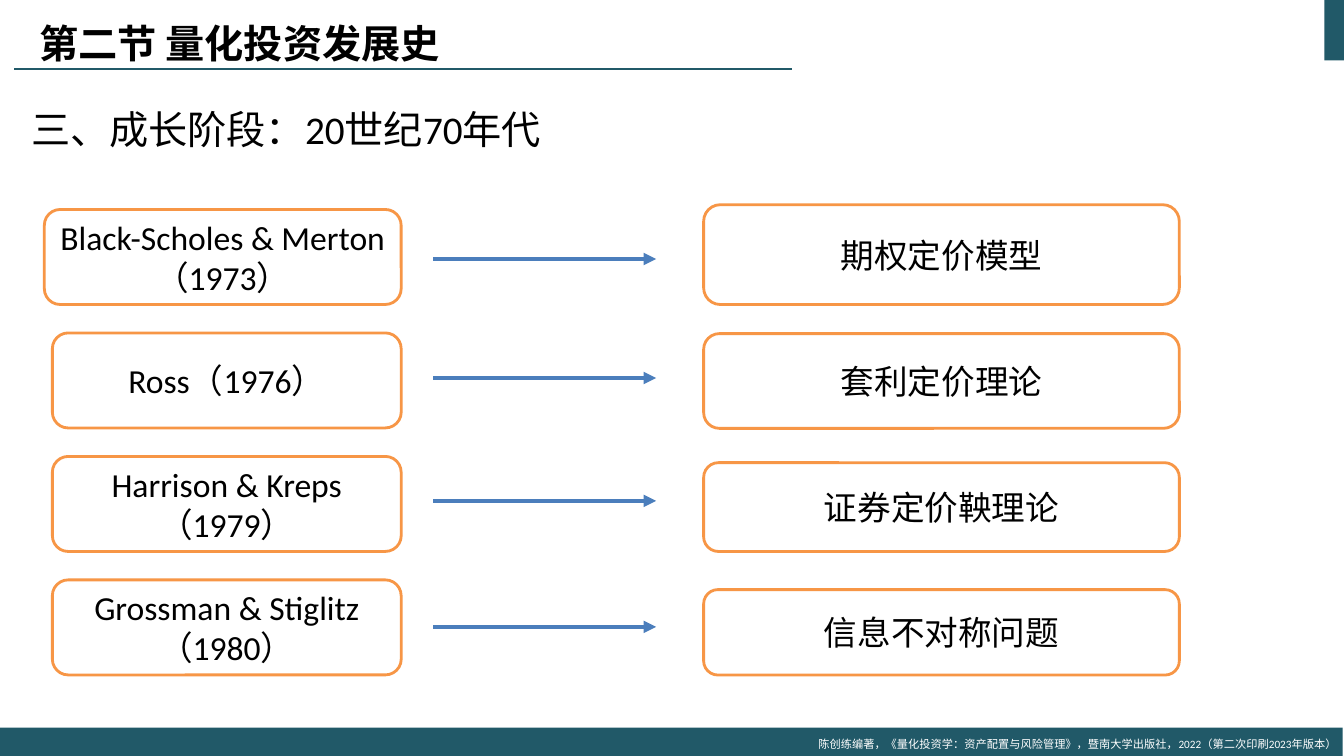
from lxml.etree import SubElement
from pptx import Presentation
from pptx.dml.color import RGBColor
from pptx.enum.shapes import MSO_CONNECTOR, MSO_SHAPE
from pptx.enum.text import MSO_ANCHOR, PP_ALIGN
from pptx.oxml.ns import qn
from pptx.util import Pt

COLORS = {
    "teal": "215968",
    "orange": "F79646",
    "blue": "4B7EBC",
    "white": "FFFFFF",
    "black": "000000",
}
LATIN_FONT = "Calibri"
CHINESE_FONT = "Noto Sans CJK SC"

ROW_TOP = 149.6
ROW_PITCH = 88.2
ROW_HEIGHT = 67.9
STAGES = [
    ("Black-Scholes & Merton\n（1973）", 31.7, 185, "期权定价模型", 146.2, 71.3),
    ("Ross（1976）", 37.4, 270, "套利定价理论", 238.3, 67.7),
    ("Harrison & Kreps\n（1979）", 37.4, 357.8, "证券定价鞅理论", 330.5, 63.4),
    ("Grossman & Stiglitz\n（1980）", 37.4, 447.8, "信息不对称问题", 421.2, 61),
]
AUTHOR_RIGHT = 286.6
ARROW_LEFT, ARROW_RIGHT = 309.6, 468.7
THEORY_LEFT, THEORY_WIDTH = 502.6, 339.8


def color(name):
    """Return the named colour."""
    return RGBColor.from_string(COLORS[name])


def write(frame, text, size, align, ink="black", latin=LATIN_FONT, bold=False):
    """Fill a text frame and format all its runs."""
    frame.word_wrap = True
    frame.text = text
    for para in frame.paragraphs:
        para.alignment = align
        for span in para.runs:
            span.font.size = Pt(size)
            span.font.bold = bold
            span.font.name = latin
            span.font.color.rgb = color(ink)
            east_asian = SubElement(span.font._element, qn("a:ea"))
            east_asian.set("typeface", CHINESE_FONT)


def add_bar(page, left, top, width, height):
    """Add a plain teal bar."""
    bar = page.shapes.add_shape(
        MSO_SHAPE.RECTANGLE, Pt(left), Pt(top), Pt(width), Pt(height))
    bar.shadow.inherit = False
    bar.fill.solid()
    bar.fill.fore_color.rgb = color("teal")
    bar.line.fill.background()


def add_line(page, left, right, y, ink, width, arrow=False):
    """Add a horizontal line, with an arrowhead at its right end if asked."""
    line = page.shapes.add_connector(
        MSO_CONNECTOR.STRAIGHT, Pt(left), Pt(y), Pt(right), Pt(y))
    line.line.color.rgb = color(ink)
    line.line.width = Pt(width)
    if arrow:
        SubElement(line.line._get_or_add_ln(), qn("a:tailEnd")).set("type", "triangle")
    SubElement(line._element.spPr, qn("a:effectLst"))


def add_text(page, left, top, width, height, text, size, align, ink="black"):
    """Add a text box and return its text frame."""
    box = page.shapes.add_textbox(Pt(left), Pt(top), Pt(width), Pt(height))
    write(box.text_frame, text, size, align, ink)
    return box.text_frame


def add_card(page, left, top, width, height, text):
    """Add a rounded, orange-edged box with centred text."""
    card = page.shapes.add_shape(
        MSO_SHAPE.ROUNDED_RECTANGLE, Pt(left), Pt(top), Pt(width), Pt(height))
    card.shadow.inherit = False
    card.fill.solid()
    card.fill.fore_color.rgb = color("white")
    card.line.color.rgb = color("orange")
    card.line.width = Pt(2)
    card.text_frame.vertical_anchor = MSO_ANCHOR.MIDDLE
    write(card.text_frame, text, 24, PP_ALIGN.CENTER)


def add_title(page, text):
    """Move, fill and format the title placeholder."""
    title = page.shapes.title
    title.left, title.top, title.width, title.height = Pt(20.9), Pt(0), Pt(783.4), Pt(61.2)
    title.text_frame.vertical_anchor = MSO_ANCHOR.MIDDLE
    write(title.text_frame, text, 28, PP_ALIGN.LEFT, latin=CHINESE_FONT, bold=True)


def main():
    """Build the slide and save it."""
    deck = Presentation()
    deck.slide_width, deck.slide_height = Pt(960), Pt(540)
    page = deck.slides.add_slide(deck.slide_layouts[5])

    add_bar(page, 946, 0, 14, 43.2)
    add_line(page, 10.1, 565.9, 49, "teal", 1.5)
    add_bar(page, 0, 519.8, 959, 20.2)
    footer = add_text(
        page, 573.8, 522.7, 388.1, 17.3,
        "陈创练编著，《量化投资学：资产配置与风险管理》，暨南大学出版社，2022（第二次印刷2023年版本）",
        8, PP_ALIGN.RIGHT, "white")
    footer.vertical_anchor = MSO_ANCHOR.MIDDLE

    add_title(page, "第二节 量化投资发展史")
    heading = add_text(
        page, 15.1, 54.7, 929.5, 387.4, "三、成长阶段：20世纪70年代", 28, PP_ALIGN.LEFT)
    heading.paragraphs[0].line_spacing = 1.5

    for row, (author, left, arrow_y, theory, top, height) in enumerate(STAGES):
        add_card(page, left, ROW_TOP + row * ROW_PITCH, AUTHOR_RIGHT - left, ROW_HEIGHT, author)
        add_line(page, ARROW_LEFT, ARROW_RIGHT, arrow_y, "blue", 3, arrow=True)
        add_card(page, THEORY_LEFT, top, THEORY_WIDTH, height, theory)

    deck.save("out.pptx")


if __name__ == "__main__":
    main()
